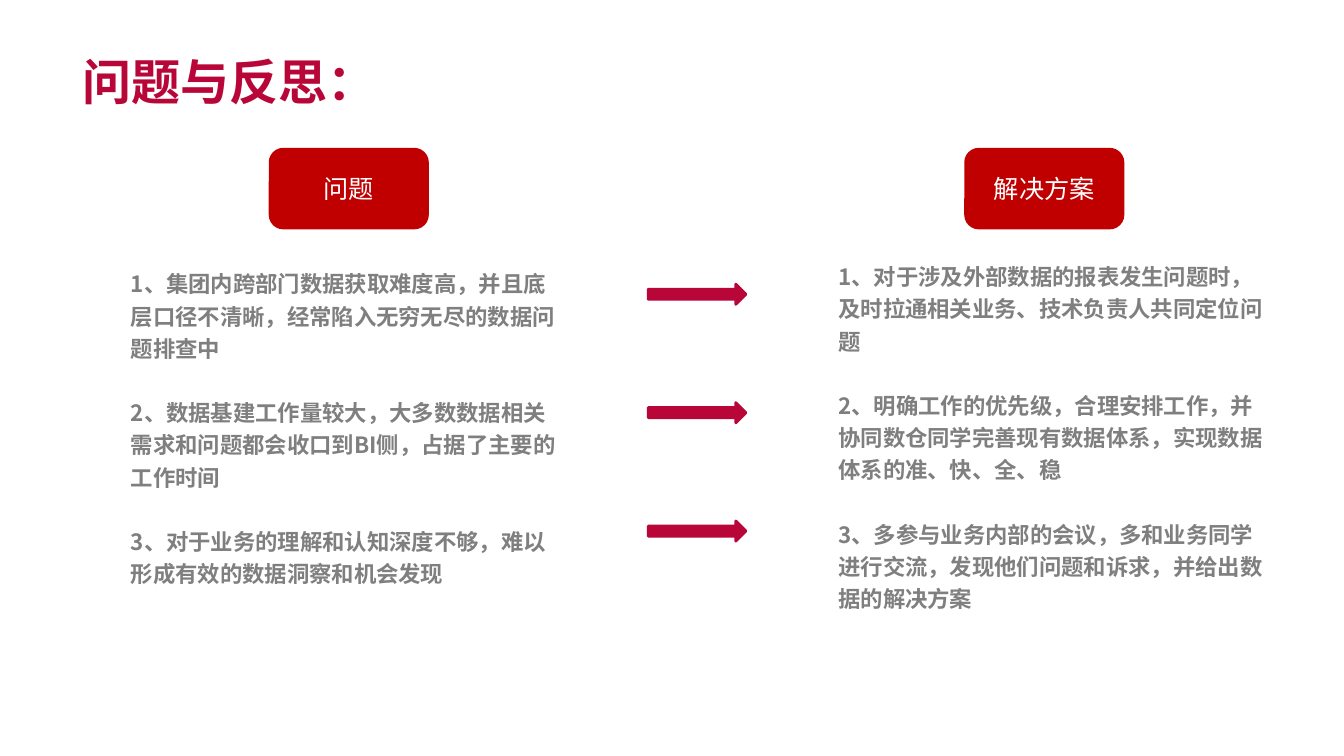
from lxml import etree
from pptx import Presentation
from pptx.dml.color import RGBColor
from pptx.enum import shapes, text
from pptx.oxml.ns import qn
from pptx.util import Pt

CJK = "Noto Sans CJK SC"
CRIMSON, RED, GRAY, WHITE = "B80638", "C00000", "7F7F7F", "FFFFFF"


def set_font(p, name, size, color, bold):
    """Format a paragraph, with the CJK face for East Asian characters."""
    f = p.font
    f.size, f.bold = Pt(size), bold
    f.color.rgb = RGBColor.from_string(color)
    f.name = name
    etree.SubElement(f._element, qn("a:ea"), typeface=CJK)


def add_block(kind, x, y, w, h, color):
    sp = s.shapes.add_shape(kind, Pt(x), Pt(y), Pt(w), Pt(h))
    sp.shadow.inherit = False
    sp.fill.solid()
    sp.fill.fore_color.rgb = sp.line.color.rgb = RGBColor.from_string(color)
    sp.line.width = Pt(2)
    return sp


prs = Presentation()
prs.slide_width, prs.slide_height = Pt(960), Pt(540)
s = prs.slides.add_slide(prs.slide_layouts[5])

title = s.shapes.title
title.left, title.top, title.width, title.height = Pt(57), Pt(34), Pt(216), Pt(47)
tf = title.text_frame
tf.text = "问题与反思："
tf.word_wrap = False
tf.auto_size = text.MSO_AUTO_SIZE.NONE
tf.vertical_anchor = text.MSO_ANCHOR.MIDDLE
tf.margin_left = tf.margin_right = tf.margin_top = tf.margin_bottom = Pt(2)
tf.paragraphs[0].alignment = text.PP_ALIGN.LEFT
set_font(tf.paragraphs[0], CJK, 35, CRIMSON, True)

# heading, heading left, body left, body top, body width, items
columns = [
    ("问题", 193, 86.4, 185.8, 325.4, [
        "1、集团内跨部门数据获取难度高，并且底层口径不清晰，经常陷入无穷无尽的数据问题排查中",
        "2、数据基建工作量较大，大多数数据相关需求和问题都会收口到BI侧，占据了主要的工作时间",
        "3、对于业务的理解和认知深度不够，难以形成有效的数据洞察和机会发现",
    ]),
    ("解决方案", 689.8, 591.8, 180.7, 323.3, [
        "1、对于涉及外部数据的报表发生问题时，及时拉通相关业务、技术负责人共同定位问题",
        "2、明确工作的优先级，合理安排工作，并协同数仓同学完善现有数据体系，实现数据体系的准、快、全、稳",
        "3、多参与业务内部的会议，多和业务同学进行交流，发现他们问题和诉求，并给出数据的解决方案",
    ]),
]
for heading, heading_x, x, y, w, items in columns:
    sp = add_block(shapes.MSO_SHAPE.ROUNDED_RECTANGLE, heading_x, 106.6, 112.3, 56.2, RED)
    tf = sp.text_frame
    tf.text = heading
    tf.vertical_anchor = text.MSO_ANCHOR.MIDDLE
    tf.paragraphs[0].alignment = text.PP_ALIGN.CENTER
    set_font(tf.paragraphs[0], "Arial", 18, WHITE, False)

    tf = s.shapes.add_textbox(Pt(x), Pt(y), Pt(w), Pt(261.4)).text_frame
    tf.word_wrap = True
    tf.text = "\n".join(items)
    for p in tf.paragraphs:
        p.line_spacing = 1.2
        p.space_after = Pt(23)
        set_font(p, CJK, 16, GRAY, True)

for i in range(3):
    add_block(shapes.MSO_SHAPE.RIGHT_ARROW, 463, 203 + 84.6 * i, 69.8, 14.4, CRIMSON)

prs.save("out.pptx")
